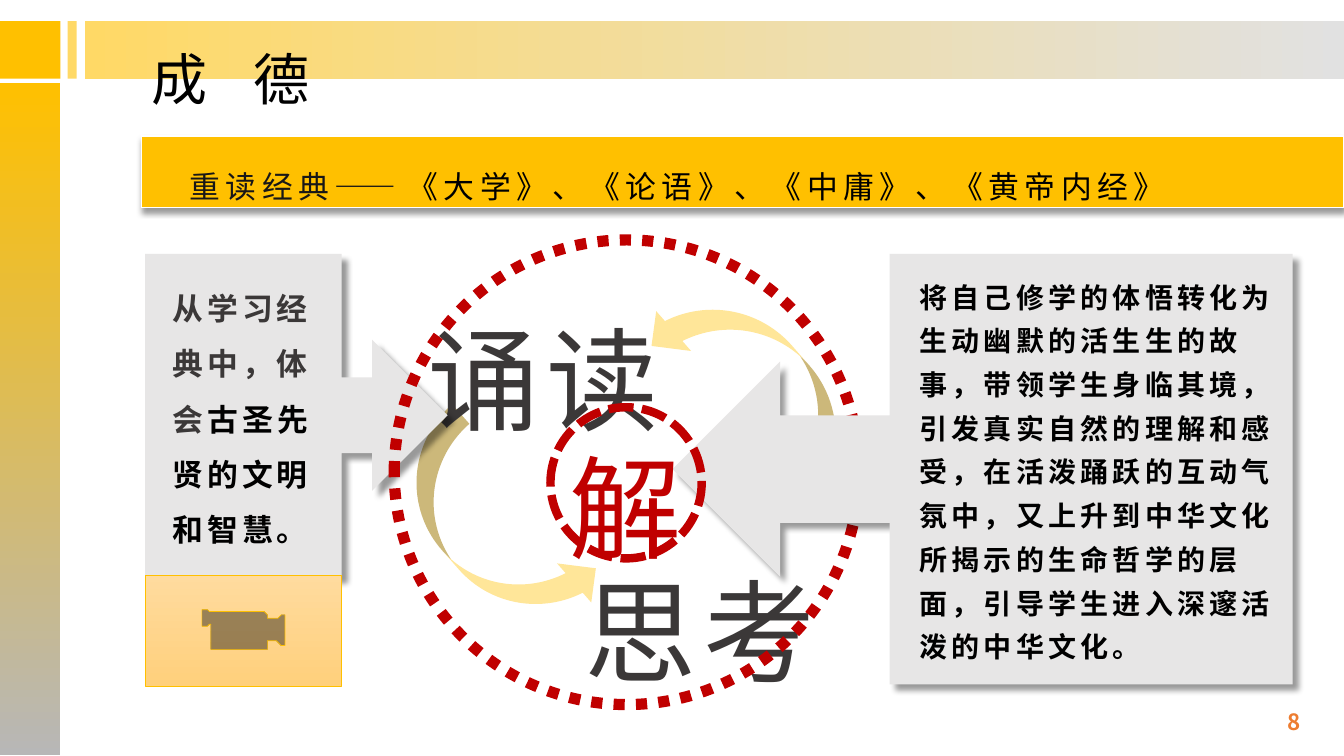
"""Build the slide on rereading the classics, with its reading and thinking cycle."""
from lxml.etree import SubElement
from pptx import Presentation
from pptx.dml.color import RGBColor
from pptx.enum.dml import MSO_LINE
from pptx.enum.shapes import MSO_SHAPE
from pptx.enum.text import MSO_AUTO_SIZE, PP_ALIGN
from pptx.oxml import parse_xml
from pptx.oxml.ns import nsdecls, qn
from pptx.util import Pt

PX = 9144
FACE = "Noto Sans CJK SC"
HEX = {
    "gold": "FFC000", "sand": "FFD966", "pale": "FFE699", "mist": "E1E1E1",
    "ash": "B7B7B7", "grey": "E7E6E6", "peach": "FFDB9E", "amber": "FFD07C",
    "red": "C00000", "coal": "3B3838", "ink": "181717", "black": "000000",
    "orange": "ED7D31",
}
RGB = {name: RGBColor.from_string(code) for name, code in HEX.items()}
SHADE = (
    f'<a:effectLst {nsdecls("a")}><a:outerShdw blurRad="50800" dist="%d" '
    'dir="%d" algn="tl" rotWithShape="0"><a:srgbClr val="000000">'
    '<a:alpha val="40000"/></a:srgbClr></a:outerShdw></a:effectLst>'
)

deck = Presentation()
deck.slide_width, deck.slide_height = 1333 * PX, 750 * PX
slide = deck.slides.add_slide(deck.slide_layouts[6])


def draw(kind, spot, fill=None, turn=0, slant=0, line=None):
    """Add a preset shape; a pair of fill names makes a gradient."""
    shape = slide.shapes.add_shape(kind, *[n * PX for n in spot])
    shape.shadow.inherit = False
    shape.rotation = turn
    if fill is None:
        shape.fill.background()
    elif isinstance(fill, str):
        shape.fill.solid()
        shape.fill.fore_color.rgb = RGB[fill]
    else:
        shape.fill.gradient()
        shape.fill.gradient_angle = slant
        for stop, name in zip(shape.fill.gradient_stops, fill):
            stop.color.rgb = RGB[name]
    if line:
        shape.line.color.rgb = RGB[line[0]]
        shape.line.width = Pt(line[1])
        if len(line) > 2:
            shape.line.dash_style = line[2]
    else:
        shape.line.fill.background()
    return shape


def write(frame, runs, size, lead=1.0, gap=0, bold=False):
    """Fill a text frame with runs of words, colour and optional spacing."""
    frame.word_wrap = True
    para = frame.paragraphs[0]
    para.line_spacing = lead
    para._p.get_or_add_pPr().set("hangingPunct", "0")
    for words, tint, *wide in runs:
        run = para.add_run()
        run.text = words
        look = {"name": FACE, "size": Pt(size), "bold": bold}
        for key, value in look.items():
            setattr(run.font, key, value)
        run.font.color.rgb = RGB[tint]
        props = run.font._element
        props.set("spc", str((wide[0] if wide else gap) * 100))
        SubElement(props, qn("a:ea"), typeface=FACE)
    return para


num = slide.shapes.add_textbox(*[n * PX for n in (1000, 698, 300, 40)])
write(num.text_frame, [("8", "orange")], 16, bold=True).alignment = PP_ALIGN.RIGHT

rect = MSO_SHAPE.RECTANGLE
draw(rect, (0, 21, 60, 57), "gold")
draw(rect, (67, 21, 9, 57), "sand")
draw(rect, (84, 21, 1249, 57), ("sand", "mist"))
draw(rect, (-304, 386, 667, 60), ("gold", "ash"), turn=90)

grid = slide.shapes.add_table(1, 1, *[n * PX for n in (140, 135, 1193, 71)])
grid.table._tbl.tblPr.insert(0, parse_xml(SHADE % (38100, 5400000)))
cell = grid.table.cell(0, 0)
cell.fill.solid()
cell.fill.fore_color.rgb = RGB["gold"]
for side, room in {"left": 48, "top": 5, "bottom": 0}.items():
    setattr(cell, f"margin_{side}", room * PX)
books = "《大学》、《论语》、《中庸》、《黄帝内经》"
write(cell.text_frame, [("重读经典——", "ink"), (books, "black")], 22, 1.5, 4)

arc = MSO_SHAPE.CURVED_RIGHT_ARROW
draw(arc, (438, 405, 103, 242), "pale", turn=318.8)
back = draw(arc, (698, 258, 105, 249), "pale", turn=318.8)
for flip in ("flipH", "flipV"):
    back._element.spPr.xfrm.set(flip, "1")

lesson = [("从学习经典中，体会", "coal"), ("古圣先贤的文明和智慧。", "black")]
story = (
    "将自己修学的体悟转化为生动幽默的活生生的故事，带领学生身临其境，"
    "引发真实自然的理解和感受，在活泼踊跃的互动气氛中，"
    "又上升到中华文化所揭示的生命哲学的层面，引导学生进入深邃活泼的中华文化。"
)
title = [("成", "black"), (" ", "black", 19), ("德", "black")]
right, left = MSO_SHAPE.RIGHT_ARROW_CALLOUT, MSO_SHAPE.LEFT_ARROW_CALLOUT
ring = ("red", 8, MSO_LINE.ROUND_DOT)
layers = [
    ("text", (140, 39, 451, 77), title, 40, 1.0, 5, False),
    ("text", (414, 236, 259, 195), [("诵读", "coal")], 80, 1.5, 5, False),
    ("text", (570, 486, 259, 195), [("思考", "coal")], 80, 1.5, 5, False),
    ("note", right, (144, 252, 300, 320), "grey"),
    ("form", MSO_SHAPE.ACTION_BUTTON_MOVIE, (144, 571, 195, 110),
     ("peach", "amber"), 0, 270, ("gold", 0.5)),
    ("form", MSO_SHAPE.OVAL, (391, 238, 461, 461), None, 0, 0, ring),
    ("text", (161, 264, 173, 281), lesson, 22, 1.5, 3, True),
    ("note", left, (667, 252, 615, 427), "grey"),
    ("text", (555, 363, 128, 195), [("解", "red")], 80, 1.5, 5, False),
    ("text", (902, 263, 373, 400), [(story, "black")], 20, 1.3, 3, True),
    ("form", MSO_SHAPE.OVAL, (546, 404, 150, 150), None, 0, 0,
     ("red", 6, MSO_LINE.SQUARE_DOT)),
]
for mode, *parts in layers:
    if mode == "text":
        spot, *rest = parts
        box = slide.shapes.add_textbox(*[n * PX for n in spot])
        write(box.text_frame, *rest)
        box.text_frame.auto_size = MSO_AUTO_SIZE.SHAPE_TO_FIT_TEXT
        continue
    shape = draw(*parts)
    if mode == "note":
        props = shape._element.spPr
        shade = parse_xml(SHADE % (76200, 2700000))
        props.replace(props.find(qn("a:effectLst")), shade)

deck.save("out.pptx")
